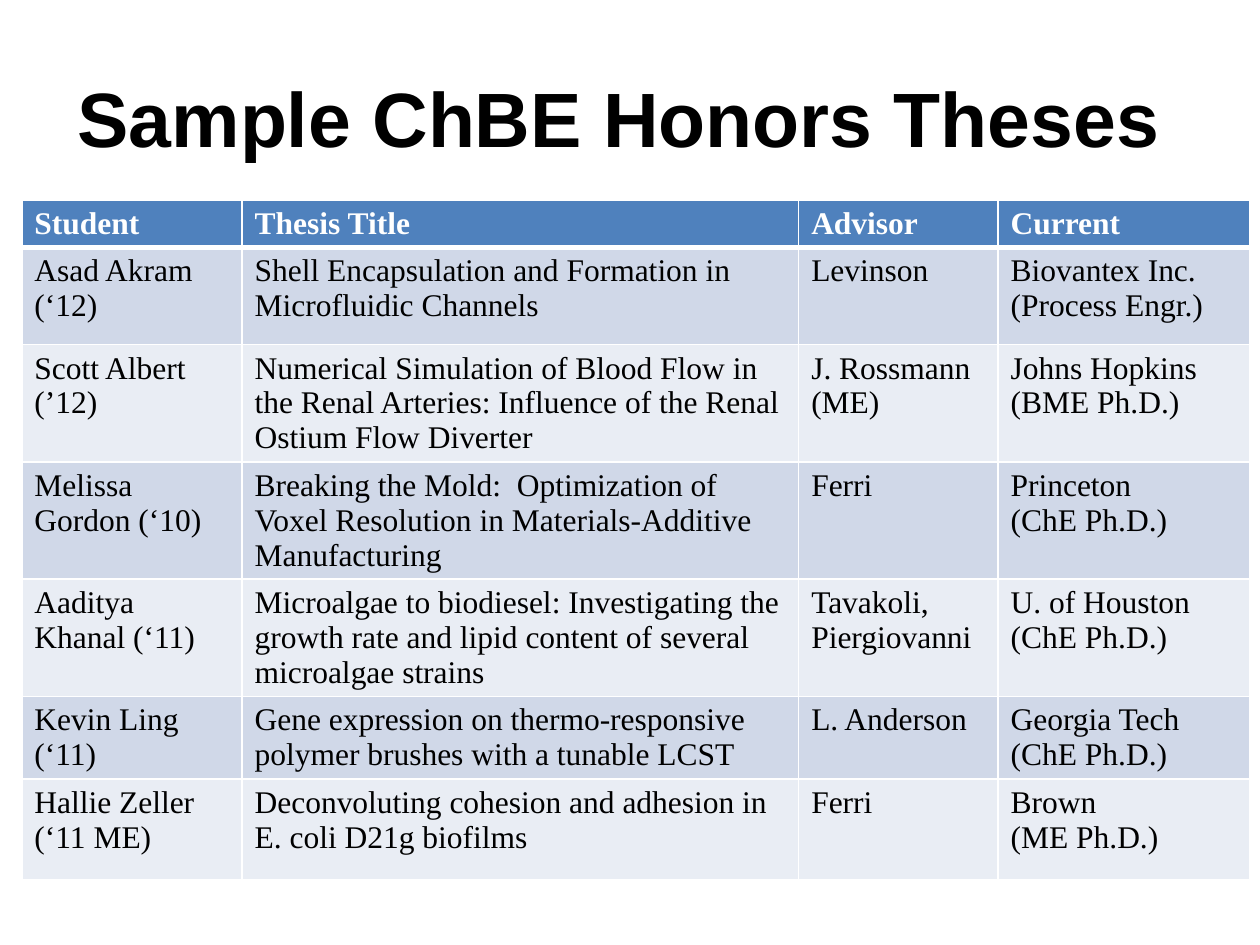
from lxml.etree import SubElement
from pptx import Presentation
from pptx.dml.color import RGBColor
from pptx.enum.text import MSO_ANCHOR, PP_ALIGN
from pptx.oxml.ns import qn
from pptx.util import Cm, Pt

WHITE = RGBColor(0xFF, 0xFF, 0xFF)
BLACK = RGBColor(0, 0, 0)
BLUE = RGBColor(0x4F, 0x81, 0xBD)
BANDS = [RGBColor(0xE9, 0xED, 0xF4), RGBColor(0xD0, 0xD8, 0xE8)]

TITLE = {"name": "Arial", "size": Pt(44), "bold": True}
HEAD = {"name": "Times New Roman", "size": Pt(18), "bold": True}
BODY = {**HEAD, "bold": False}

WIDTHS = [4.44, 11.22, 4.02, 5.08]
HEIGHTS = [0.85, 1.96, 2.06, 1.45, 1.45, 1.45, 2.03]

# "\n" starts a paragraph, "\v" breaks a line
ROWS = [
    ["Student", "Thesis Title", "Advisor", "Current"],
    ["Asad Akram (‘12)",
     "Shell Encapsulation and Formation in Microfluidic Channels",
     "Levinson", "Biovantex Inc. (Process Engr.)"],
    ["Scott Albert (’12)",
     "Numerical Simulation of Blood Flow in the Renal Arteries: "
     "Influence of the Renal Ostium Flow Diverter",
     "J. Rossmann (ME)", "Johns Hopkins\n(BME Ph.D.)"],
    ["Melissa Gordon (‘10)",
     "Breaking the Mold:  Optimization of Voxel Resolution in "
     "Materials-Additive Manufacturing",
     "Ferri", "Princeton\n(ChE Ph.D.)"],
    ["Aaditya Khanal (‘11)",
     "Microalgae to biodiesel: Investigating the growth rate and "
     "lipid content of several microalgae strains",
     "Tavakoli, Piergiovanni", "U. of Houston\n(ChE Ph.D.)"],
    ["Kevin Ling (‘11)",
     "Gene expression on thermo-responsive polymer brushes with a "
     "tunable LCST",
     "L. Anderson", "Georgia Tech\v(ChE Ph.D.)"],
    ["Hallie Zeller (‘11 ME)",
     "Deconvoluting cohesion and adhesion in E. coli D21g biofilms",
     "Ferri", "Brown\v(ME Ph.D.)"],
]


def write(frame, text, form, color):
    frame.text = text
    for par in frame.paragraphs:
        for run in par.runs:
            for key, value in form.items():
                setattr(run.font, key, value)
            run.font.color.rgb = color


def edge(cell, sides):
    props = cell._tc.get_or_add_tcPr()
    for side, width in sides.items():
        line = SubElement(props, qn(f"a:ln{side}"), w=str(Pt(width)))
        fill = SubElement(line, qn("a:solidFill"))
        SubElement(fill, qn("a:srgbClr"), val=str(WHITE))


def add_title(slide, text):
    box = slide.shapes.add_textbox(Cm(1.27), Cm(0.76), Cm(22.86), Cm(3.18))
    frame = box.text_frame
    frame.word_wrap = True
    frame.vertical_anchor = MSO_ANCHOR.MIDDLE
    write(frame, text, TITLE, BLACK)
    frame.paragraphs[0].alignment = PP_ALIGN.CENTER


def add_grid(slide):
    table = slide.shapes.add_table(
        len(ROWS), len(WIDTHS), Cm(0.44), Cm(4.03),
        Cm(sum(WIDTHS)), Cm(sum(HEIGHTS))).table
    for col, width in zip(table.columns, WIDTHS):
        col.width = Cm(width)
    for row, height in zip(table.rows, HEIGHTS):
        row.height = Cm(height)

    # Header row, then banded body rows
    for i, row in enumerate(ROWS):
        form, color, fill = (BODY, BLACK, BANDS[i % 2]) if i else (HEAD, WHITE, BLUE)
        sides = {"L": 1, "R": 1, "T": 3 if i == 1 else 1, "B": 1 if i else 3}
        for j, text in enumerate(row):
            cell = table.cell(i, j)
            write(cell.text_frame, text, form, color)
            edge(cell, sides)
            cell.fill.solid()
            cell.fill.fore_color.rgb = fill


def main():
    deck = Presentation()
    deck.slide_width, deck.slide_height = Cm(25.4), Cm(19.05)
    slide = deck.slides.add_slide(deck.slide_layouts[6])
    add_grid(slide)
    add_title(slide, "Sample ChBE Honors Theses ")
    deck.save("out.pptx")


if __name__ == "__main__":
    main()
